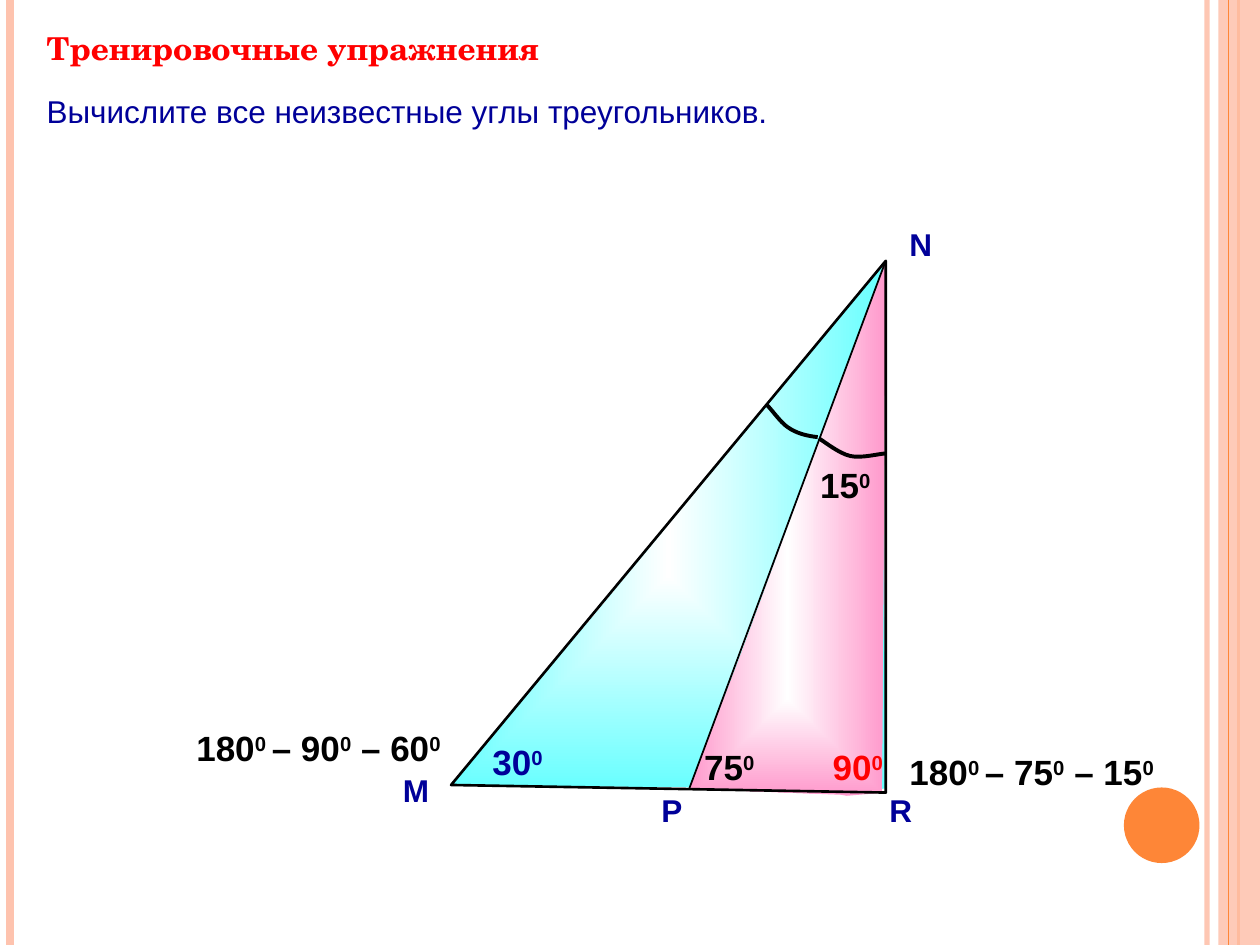
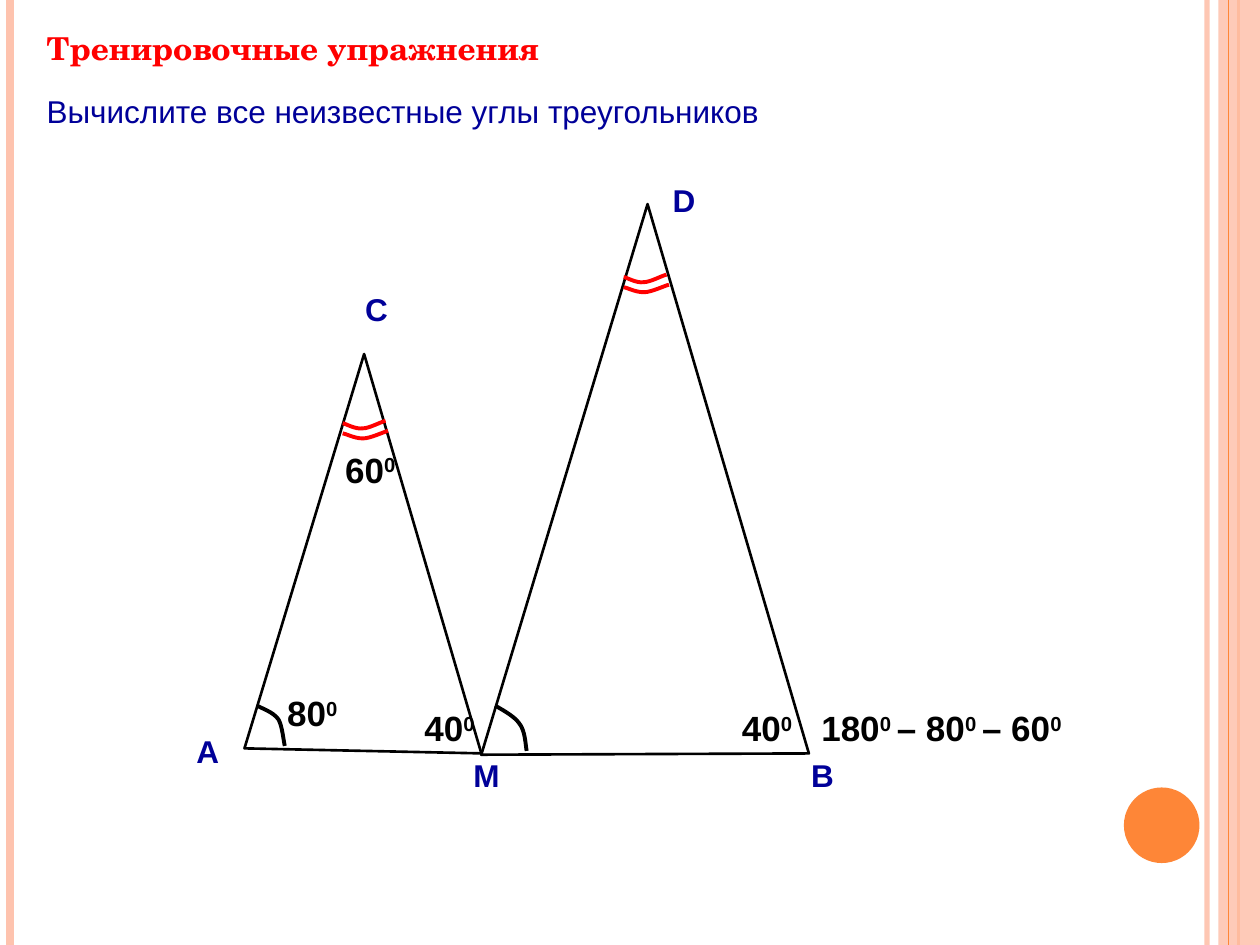
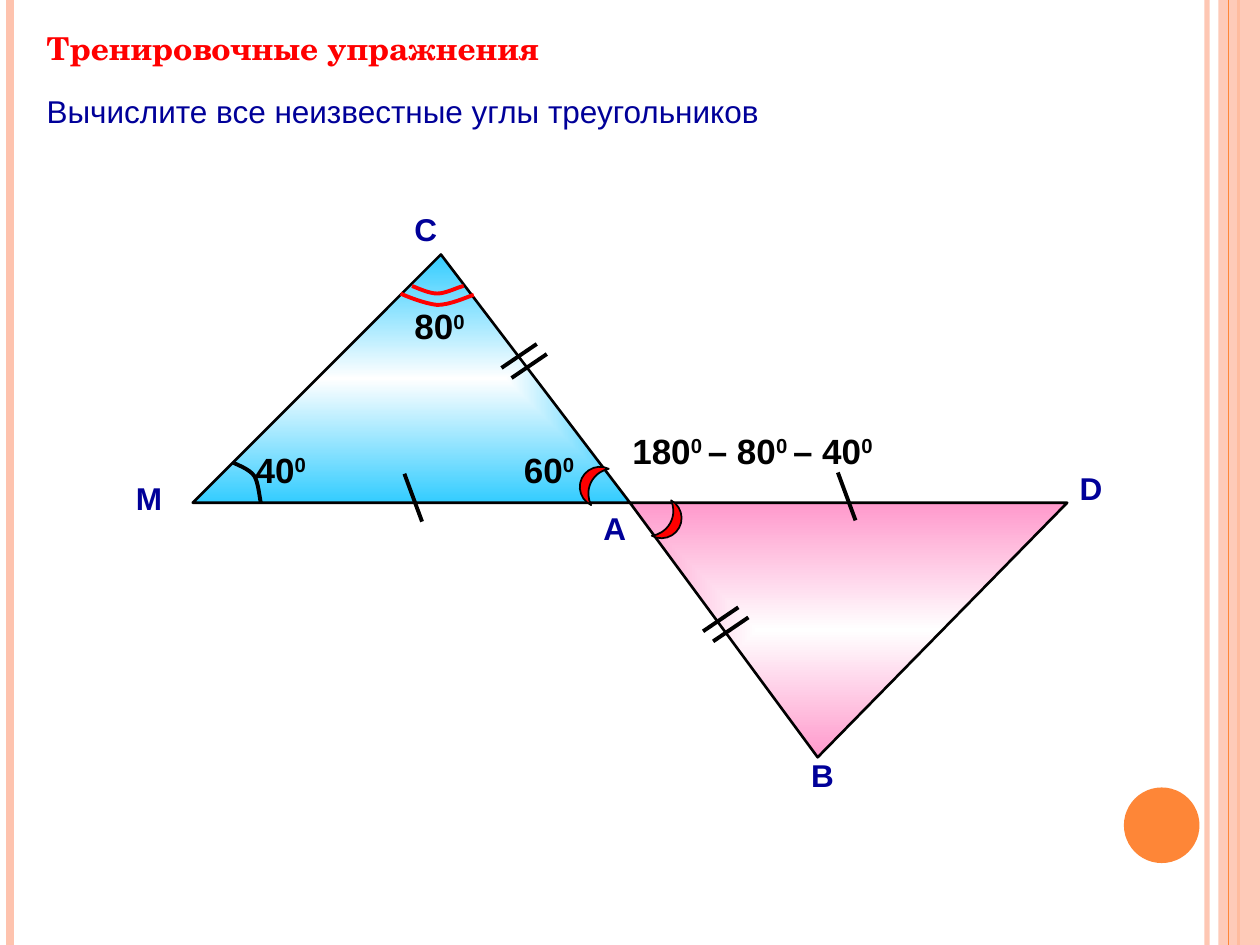
from lxml.etree import SubElement as Sub
from pptx import Presentation
from pptx.dml.color import RGBColor as RGB
from pptx.enum.shapes import MSO_CONNECTOR as LINK, MSO_SHAPE as FORM
from pptx.enum.text import MSO_ANCHOR as ANCHOR, MSO_AUTO_SIZE as FIT, PP_ALIGN as ALIGN
from pptx.oxml import parse_xml
from pptx.oxml.ns import nsdecls, qn
from pptx.util import Inches, Pt

HUES = {"peach": "FEC3AE", "orange": "FE8637", "red": "FF0000", "navy": "000099",
        "black": "000000", "aqua": "66FFFF", "pink": "FF99CC", "sky": "33CCFF"}
INK = {name: RGB.from_string(code) for name, code in HUES.items()}


def label(page, x, y, text, color="navy"):
    parts = text.split("|")
    size, high = (18, 0.5) if len(parts) == 1 else (20, 0.43)
    wide = {1: 0.44, 3: 0.61}.get(len(parts), 2.2)
    box = page.shapes.add_textbox(Inches(x), Inches(y), Inches(wide), Inches(high))
    box.text_frame.word_wrap = False
    for i, part in enumerate(parts):
        if part:
            run = box.text_frame.paragraphs[0].add_run()
            run.text = part
            run.font.name, run.font.size, run.font.bold = "Arial", Pt(size), True
            run.font.color.rgb = INK[color]
            if i % 2:
                run._r.get_or_add_rPr().set("baseline", "30000")


def draw(page, dots, color="black", width=2.25, fill=None, shut=False, curve=False, shift=(0, 0)):
    spots = [(Inches(x + shift[0]), Inches(y + shift[1])) for x, y in dots]
    pen = page.shapes.build_freeform(*spots[0])
    pen.add_line_segments(spots[1:], close=shut)
    form = pen.convert_to_shape()
    form.shadow.inherit = False
    form.fill.background()
    if color:
        form.line.color.rgb = INK[color]
        form.line.width = Pt(width)
    else:
        form.line.fill.background()
    props = form.element.spPr
    if fill:
        props.replace(props.find(qn("a:noFill")), parse_xml(
            f'<a:gradFill {nsdecls("a")} rotWithShape="1"><a:gsLst>'
            '<a:gs pos="0"><a:srgbClr val="FFFFFF"/></a:gs>'
            f'<a:gs pos="100000"><a:srgbClr val="{HUES[fill]}"/></a:gs></a:gsLst>'
            '<a:path path="rect"><a:fillToRect l="50000" t="50000" r="50000" b="50000"/></a:path>'
            '</a:gradFill>'))
    if curve:
        steps = list(props.iter(qn("a:lnTo")))
        trace = steps[0].getparent()
        for i in range(0, len(steps), 3):
            bend = Sub(trace, qn("a:cubicBezTo"))
            for step in steps[i:i + 3]:
                bend.append(step[0])
                trace.remove(step)


deck = Presentation()
deck.slide_width, deck.slide_height = Inches(10), Inches(7.5)
plan = deck.slide_layouts[1]
task = "Вычислите все неизвестные углы треугольников"
pages = []
for text in (task + ".", task, task):
    page = deck.slides.add_slide(plan)
    pages.append(page)
    head, body = page.placeholders
    for hold, y, wide, words, face, color, bold, anchor in (
            (head, 0.13, 5.43, "Тренировочные упражнения", "TeX Gyre Schola", "red", True, ANCHOR.MIDDLE),
            (body, 0.68, 9.37, text, "Arial", "navy", False, ANCHOR.TOP)):
        hold.left, hold.top, hold.width, hold.height = map(Inches, (0.27, y, wide, 0.5))
        frame = hold.text_frame
        frame.auto_size, frame.vertical_anchor = FIT.NONE, anchor
        para = frame.paragraphs[0]
        para.alignment, para.space_before = ALIGN.LEFT, Pt(0)
        props = para._p.get_or_add_pPr()
        props.set("marL", "0")
        props.set("indent", "0")
        Sub(props, qn("a:buNone"))
        run = para.add_run()
        run.text = words
        run.font.name, run.font.size, run.font.bold = face, Pt(18), bold
        run.font.color.rgb = INK[color]

one, two, three = pages

bars = []
for x, color, width in ((9.58, "peach", 3), (0.08, "peach", 4.5), (9.83, "orange", 1.5), (9.75, "orange", 0.75)):
    bar = one.shapes.add_connector(LINK.STRAIGHT, Inches(x), 0, Inches(x), Inches(7.5))
    bar.line.color.rgb, bar.line.width = INK[color], Pt(width)
    Sub(bar.element.spPr, qn("a:effectLst"))
    bars.append(bar)
band = one.shapes.add_shape(FORM.RECTANGLE, Inches(9.67), 0, Inches(0.33), Inches(7.5))
disc = one.shapes.add_shape(FORM.OVAL, Inches(8.92), Inches(6.25), Inches(0.6), Inches(0.6))
for form, color in ((band, "peach"), (disc, "orange")):
    form.shadow.inherit = False
    form.fill.solid()
    form.fill.fore_color.rgb = INK[color]
    form.line.fill.background()
for form, part in ((bars[0], 93), (band, 87)):
    tint = next(form.element.spPr.iter(qn("a:srgbClr")))
    Sub(tint, qn("a:alpha")).set("val", str(part * 1000))
for form in (*bars[:3], band, bars[3], disc):
    deck.slide_master.shapes.element.append(form.element)

draw(one, [(7.03, 6.26), (3.58, 6.23), (4.75, 4.85), (7, 2.1), (7.03, 6.29)], None, fill="aqua", shut=True)
draw(one, [(5.47, 6.26), (5.89, 5.18), (7.03, 2.07), (7, 6.29), (7.03, 6.29), (6.67, 6.32), (6.73, 6.31)],
     None, fill="pink", shut=True)
draw(one, [(3.58, 6.23), (7.03, 2.07), (7.03, 6.29)], width=1.5, shut=True)
draw(one, [(7.03, 2.07), (5.47, 6.26)], width=1)
draw(one, [(6.08, 3.21), (6.11, 3.23), (6.19, 3.35), (6.25, 3.39), (6.32, 3.44), (6.4, 3.46), (6.49, 3.47)],
     curve=True)
draw(one, [(7.03, 3.6), (6.98, 3.6), (6.84, 3.64), (6.75, 3.62), (6.66, 3.6), (6.55, 3.51), (6.5, 3.48)],
     curve=True)

draw(two, [(1.94, 5.94), (2.89, 2.81), (3.82, 5.98)], width=1.5, shut=True)
draw(two, [(3.82, 5.99), (5.14, 1.62), (6.42, 5.98)], width=1.5, shut=True)
for shift in ((0, 0), (2.23, -1.16)):
    draw(two, [(2.72, 3.36), (2.74, 3.36), (2.82, 3.41), (2.88, 3.4), (2.93, 3.4), (3.02, 3.35), (3.06, 3.34)],
         "red", curve=True, shift=shift)
    draw(two, [(2.72, 3.44), (2.74, 3.44), (2.81, 3.48), (2.88, 3.48), (2.94, 3.48), (3.04, 3.43), (3.08, 3.42)],
         "red", curve=True, shift=shift)
draw(two, [(3.93, 5.6), (3.96, 5.62), (4.08, 5.68), (4.12, 5.74), (4.17, 5.8), (4.17, 5.91), (4.18, 5.96)],
     curve=True)

draw(three, [(5, 3.99), (3.5, 2.02), (1.53, 3.99)], width=1.5, fill="sky", shut=True)
draw(three, [(5, 3.99), (6.49, 6.01), (8.47, 3.99)], width=1.5, fill="pink", shut=True)
for x, y in ((3.98, 2.73), (5.58, 4.82)):
    for gap in (0, 0.08):
        draw(three, [(x, y + 0.19), (x + 0.28, y)], shift=(gap, gap))
for x, y in ((3.21, 3.76), (6.65, 3.75)):
    draw(three, [(x, y), (x + 0.14, y + 0.38)])
draw(three, [(3.18, 2.33), (3.22, 2.35), (3.37, 2.41), (3.47, 2.42), (3.57, 2.42), (3.7, 2.36), (3.76, 2.34)],
     "red", curve=True)
draw(three, [(3.27, 2.27), (3.3, 2.28), (3.4, 2.33), (3.47, 2.33), (3.54, 2.33), (3.63, 2.28), (3.68, 2.27)],
     "red", curve=True)
for x, y, turn in ((4.61, 3.67, 26), (5.24, 3.99, 208.5)):
    moon = three.shapes.add_shape(FORM.MOON, Inches(x), Inches(y), Inches(0.16), Inches(0.32))
    moon.rotation = turn
    moon.shadow.inherit = False
    moon.fill.solid()
    moon.fill.fore_color.rgb = INK["red"]
    moon.line.color.rgb, moon.line.width = INK["black"], Pt(1)

for page, shift in ((two, (0, 0)), (three, (-0.19, -1.93))):
    draw(page, [(2.04, 5.6), (2.07, 5.62), (2.17, 5.65), (2.21, 5.71), (2.24, 5.76), (2.25, 5.88), (2.26, 5.92)],
         curve=True, shift=shift)

names = (
    (one, (("M", 3.1, 6.07), ("N", 7.12, 1.74), ("P", 5.15, 6.23), ("R", 6.96, 6.23))),
    (two, (("А", 1.46, 5.76), ("С", 2.8, 2.25), ("М", 3.66, 5.95), ("В", 6.34, 5.95), ("D", 5.24, 1.39))),
    (three, (("А", 4.69, 3.99), ("С", 3.19, 1.62), ("М", 0.98, 3.75), ("В", 6.34, 5.95), ("D", 8.47, 3.67))),
)
for page, marks in names:
    for text, x, y in marks:
        label(page, x, y, text)

sizes = (
    (one, (("75|0|", 5.49, 5.87, "black"), ("90|0|", 6.51, 5.87, "red"), ("15|0|", 6.41, 3.63, "black"),
           ("30|0|", 3.81, 5.83, "navy"), ("180|0 |– 75|0| – 15|0", 7.12, 5.91, "black"),
           ("180|0 |– 90|0| – 60|0", 1.46, 5.72, "black"))),
    (two, (("80|0|", 2.18, 5.44, "black"), ("60|0|", 2.64, 3.51, "black"), ("40|0|", 3.27, 5.56, "black"),
           ("40|0|", 5.79, 5.56, "black"), ("180|0 |– 80|0 |– 60|0", 6.42, 5.56, "black"))),
    (three, (("40|0|", 1.93, 3.51, "black"), ("80|0|", 3.19, 2.37, "black"), ("60|0|", 4.06, 3.51, "black"),
             ("180|0 |– 80|0 |– 40|0", 4.92, 3.36, "black"))),
)
for page, marks in sizes:
    for text, x, y, color in marks:
        label(page, x, y, text, color)

deck.save("out.pptx")
